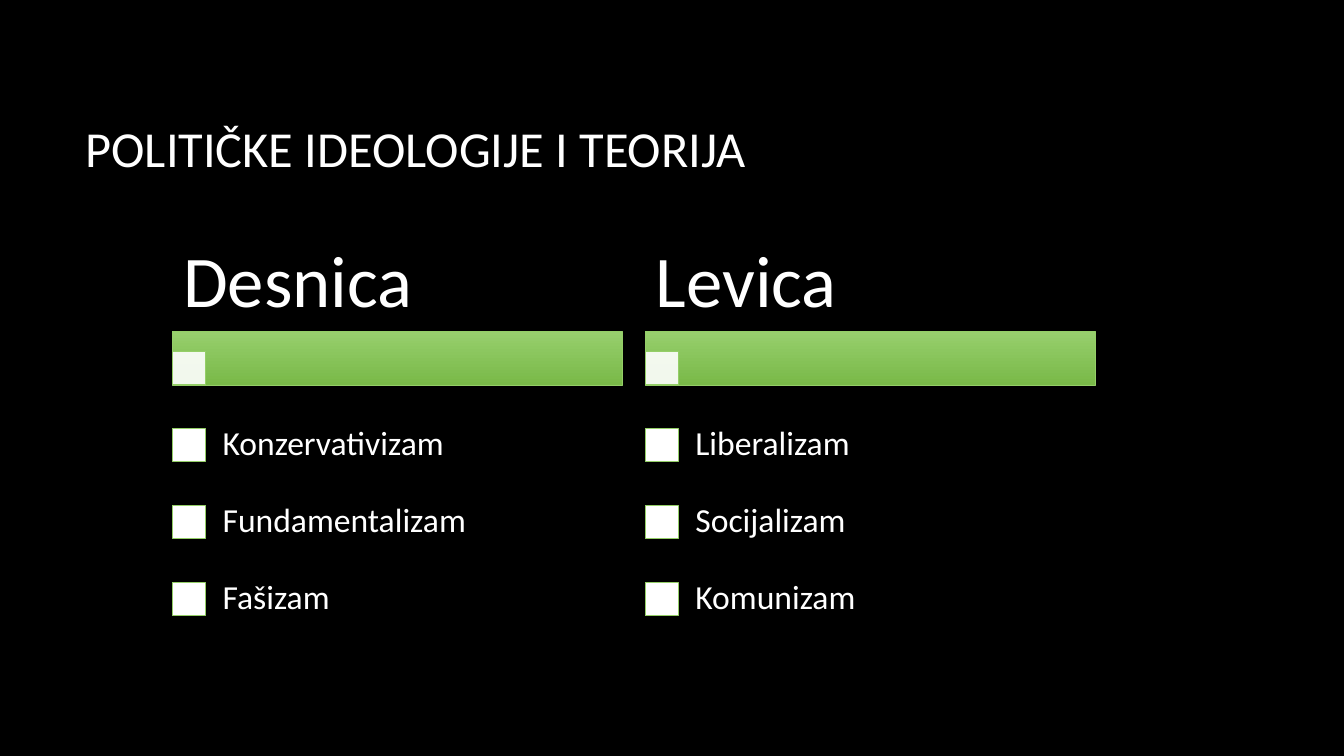
from dataclasses import dataclass

from lxml import etree
from pptx import Presentation
from pptx.dml.color import RGBColor
from pptx.enum import shapes, text
from pptx.oxml import ns
from pptx.shapes.autoshape import Shape
from pptx.slide import Slide
from pptx.util import Pt

BLACK = RGBColor(0x00, 0x00, 0x00)
WHITE = RGBColor(0xFF, 0xFF, 0xFF)
GREEN_LIGHT = RGBColor(0x97, 0xCF, 0x6D)
GREEN_DARK = RGBColor(0x79, 0xB9, 0x48)
GREEN_LINE = RGBColor(0x94, 0xCE, 0x67)

FONT = "Calibri"
COLUMN_LEFT = 123.1
COLUMN_PITCH = 337.7
COLUMN_WIDTH = 321.8
HEADING_TOP = 168.5
HEADING_HEIGHT = 68.4
BAR_TOP = 236.9
BAR_HEIGHT = 38.2
BAR_SQUARE_TOP = 250.8
SQUARE = 23.6
ROW_TOP = 290.2
ROW_PITCH = 55.1
ITEM_INDENT = 22.5


@dataclass
class Column:
    heading: str
    items: list[str]


COLUMNS = [
    Column("Desnica", ["Konzervativizam", "Fundamentalizam", "Fašizam"]),
    Column("Levica", ["Liberalizam", "Socijalizam", "Komunizam"]),
]


def add_label(s: Slide, label: str, left: float, top: float, width: float,
              height: float, size: float, inset_x: float, inset_y: float,
              line_spacing: float = 0.9) -> None:
    tf = s.shapes.add_textbox(Pt(left), Pt(top), Pt(width), Pt(height)).text_frame
    tf.word_wrap = True
    tf.vertical_anchor = text.MSO_ANCHOR.MIDDLE
    tf.margin_left = tf.margin_right = Pt(inset_x)
    tf.margin_top = tf.margin_bottom = Pt(inset_y)
    p = tf.paragraphs[0]
    p.line_spacing = line_spacing
    r = p.add_run()
    r.text = label
    r.font.name = FONT
    r.font.size = Pt(size)
    r.font.color.rgb = WHITE


def add_box(s: Slide, left: float, top: float, width: float, height: float) -> Shape:
    sp = s.shapes.add_shape(shapes.MSO_SHAPE.RECTANGLE,
                            Pt(left), Pt(top), Pt(width), Pt(height))
    sp.shadow.inherit = False
    sp.line.color.rgb = GREEN_LINE
    sp.line.width = Pt(0.75)
    return sp


def add_bar(s: Slide, left: float) -> None:
    sp = add_box(s, left, BAR_TOP, COLUMN_WIDTH, BAR_HEIGHT)
    sp.fill.gradient()
    sp.fill.gradient_angle = 270
    for stop, color, position in zip(sp.fill.gradient_stops,
                                     (GREEN_LIGHT, GREEN_DARK), (0, 1)):
        stop.color.rgb = color
        stop.position = position
    effects = sp._element.spPr.find(ns.qn("a:effectLst"))
    shadow = etree.SubElement(effects, ns.qn("a:outerShdw"), blurRad=str(Pt(4)),
                              dist=str(Pt(3)), dir="5400000", rotWithShape="0")
    color = etree.SubElement(shadow, ns.qn("a:srgbClr"), val=str(BLACK))
    etree.SubElement(color, ns.qn("a:alpha"), val="35000")


def add_square(s: Slide, left: float, top: float, opacity: int = 100) -> None:
    sp = add_box(s, left, top, SQUARE, SQUARE)
    sp.fill.solid()
    sp.fill.fore_color.rgb = WHITE
    if opacity < 100:
        color = sp._element.spPr.find(ns.qn("a:solidFill"))[0]
        etree.SubElement(color, ns.qn("a:alpha"), val=str(opacity * 1000))


def add_column(s: Slide, column: Column, left: float) -> None:
    add_bar(s, left)
    add_square(s, left, BAR_SQUARE_TOP, 90)
    add_label(s, column.heading, left, HEADING_TOP, COLUMN_WIDTH,
              HEADING_HEIGHT, 52, 7.8, 5.2)
    for row, item in enumerate(column.items):
        top = ROW_TOP + row * ROW_PITCH
        add_square(s, left, top + (ROW_PITCH - SQUARE) / 2)
        add_label(s, item, left + ITEM_INDENT, top, COLUMN_WIDTH - ITEM_INDENT,
                  ROW_PITCH, 24, 13.4, 13.4)


def main() -> None:
    prs = Presentation()
    prs.slide_width = Pt(960)
    prs.slide_height = Pt(540)
    s = prs.slides.add_slide(prs.slide_layouts[6])
    s.background.fill.solid()
    s.background.fill.fore_color.rgb = BLACK
    add_label(s, "POLITIČKE IDEOLOGIJE I TEORIJA", 54, 48.2, 797.8, 114.5,
              36, 7.2, 3.6, 1)
    for index, column in enumerate(COLUMNS):
        add_column(s, column, COLUMN_LEFT + index * COLUMN_PITCH)
    prs.save("out.pptx")


if __name__ == "__main__":
    main()
